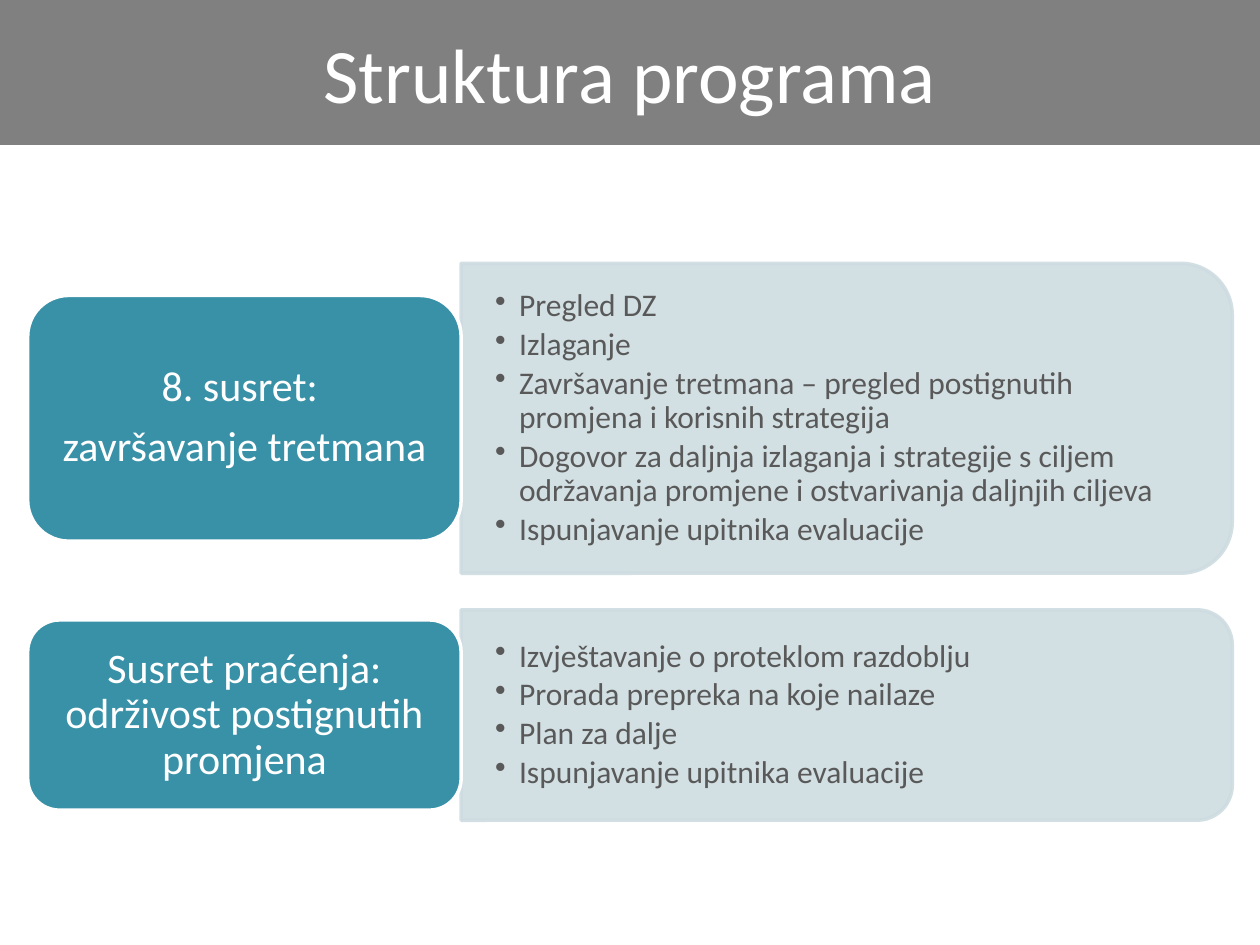
from lxml import etree
from pptx import Presentation
from pptx.dml.color import RGBColor
from pptx.enum import shapes, text
from pptx.oxml import ns
from pptx.util import Inches, Pt

HUES = {"bar": "808080", "panel": "CEDCE1", "label": "3891A7",
        "white": "FFFFFF", "body": "595959"}
FONT = "Calibri"
LEFT, SPLIT, WIDE = 0.22, 3.66, 6.12
CORNER = 0.29 / 6
ROWS = [
    (2.09, 2.46, 1.95, ["8. susret: ", "završavanje tretmana"],
     ["Pregled DZ", "Izlaganje",
      "Završavanje tretmana – pregled postignutih promjena i korisnih strategija",
      "Dogovor za daljnja izlaganja i strategije s ciljem održavanja promjene "
      "i ostvarivanja daljnjih ciljeva",
      "Ispunjavanje upitnika evaluacije"]),
    (4.84, 1.67, 1.51, ["Susret praćenja: održivost postignutih promjena"],
     ["Izvještavanje o proteklom razdoblju", "Prorada prepreka na koje nailaze",
      "Plan za dalje", "Ispunjavanje upitnika evaluacije"]),
]


def tone(name):
    """Return the named colour."""
    return RGBColor.from_string(HUES[name])


def fade(fill):
    """Make every solid colour under an element 90 % opaque."""
    for hue in fill.iter(ns.qn("a:srgbClr")):
        etree.SubElement(hue, ns.qn("a:alpha"), val="90000")


def add_block(slide, kind, box, fill, line=None):
    """Add a filled shape with an optional two-point outline."""
    block = slide.shapes.add_shape(kind, *map(Inches, box))
    block.shadow.inherit = False
    block.fill.solid()
    block.fill.fore_color.rgb = tone(fill)
    if line:
        block.line.color.rgb = tone(line)
        block.line.width = Pt(2)
    else:
        block.line.fill.background()
    return block


def set_text(frame, lines, size, hue, align, gap=0, space=None):
    """Write lines into a wrapped, vertically centred frame."""
    frame.word_wrap = True
    frame.vertical_anchor = text.MSO_ANCHOR.MIDDLE
    frame.text = "\n".join(lines)
    for para in frame.paragraphs:
        para.alignment = align
        para.line_spacing = space
        para.space_after = Pt(gap)
        for run in para.runs:
            run.font.name = FONT
            run.font.size = Pt(size)
            run.font.color.rgb = tone(hue)


def add_text(slide, box, pad):
    """Add a text box inset by pad and return its frame."""
    left, top, wide, high = box
    inner = left + pad, top + pad, wide - 2 * pad, high - 2 * pad
    return slide.shapes.add_textbox(*map(Inches, inner)).text_frame


def add_panel(slide, box, items):
    """Draw the pale panel rounded on its right side, with bullets."""
    left, top, wide, high = box
    turned = left + (wide - high) / 2, top + (high - wide) / 2, high, wide
    panel = add_block(slide, shapes.MSO_SHAPE.ROUND_2_SAME_RECTANGLE, turned,
                      "panel", "panel")
    panel.rotation = 90
    fade(panel._element.spPr)
    pad = high * CORNER
    frame = add_text(slide, (left - pad, top, wide, high), pad)
    frame.auto_size = text.MSO_AUTO_SIZE.NONE
    frame._txBody.getparent().spPr.xfrm.ext.cx = Inches(wide - pad)
    frame.margin_left = frame.margin_right = Inches(0.27)
    frame.margin_top = frame.margin_bottom = Inches(0.14)
    set_text(frame, items, 18, "body", text.PP_ALIGN.LEFT, 2.7, 0.9)
    for para in frame.paragraphs:
        props = para._p.get_or_add_pPr()
        props.set("marL", str(Inches(0.19)))
        props.set("indent", str(-Inches(0.19)))
        etree.SubElement(props, ns.qn("a:buChar"), char="•")


def add_label(slide, box, lines):
    """Draw the rounded label with its centred heading."""
    add_block(slide, shapes.MSO_SHAPE.ROUNDED_RECTANGLE, box, "label", "white")
    frame = add_text(slide, box, box[3] * CORNER)
    set_text(frame, lines, 24, "white", text.PP_ALIGN.CENTER, 8.4, 0.9)


def add_title(slide, box, title):
    """Draw the title band."""
    bar = add_block(slide, shapes.MSO_SHAPE.RECTANGLE, box, "bar")
    set_text(bar.text_frame, [title], 44, "white", text.PP_ALIGN.CENTER)


def main():
    """Build and save the slide."""
    deck = Presentation()
    deck.slide_width, deck.slide_height = Inches(10), Inches(7.5)
    slide = deck.slides.add_slide(deck.slide_layouts[6])
    for top, high, tall, lines, items in ROWS:
        add_panel(slide, (SPLIT, top, WIDE, high), items)
        inset = (high - tall) / 2
        add_label(slide, (LEFT, top + inset, SPLIT - LEFT, tall), lines)
    add_title(slide, (0, 0, 10, 1.15), "Struktura programa")
    deck.save("out.pptx")


if __name__ == "__main__":
    main()
